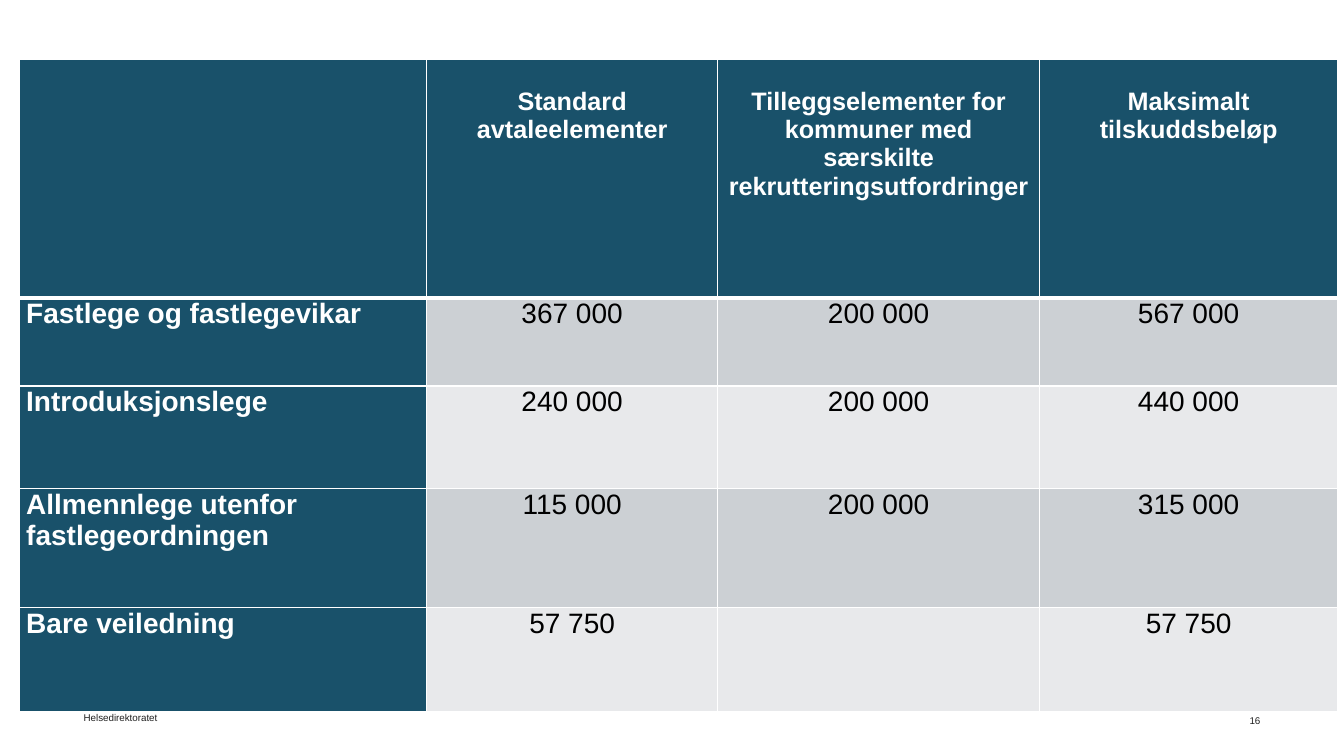
from lxml import etree
from pptx import Presentation
from pptx.dml.color import RGBColor
from pptx.enum.text import MSO_ANCHOR, PP_ALIGN
from pptx.oxml import ns
from pptx.util import Inches, Pt

COLORS = {
    "header": "19516A",
    "odd_row": "CCD0D4",
    "even_row": "E8E9EB",
    "white": "FFFFFF",
    "amount": "000000",
    "footer": "202020",
}
FONT = "Arial"
COLUMN_WIDTHS = [4.04, 2.89, 3.19, 2.96]
ROW_HEIGHTS = [2.37, 0.87, 1.02, 1.18, 1.03]
GRANTS = [
    ["", "Standard avtaleelementer",
     "Tilleggselementer for kommuner med\nsærskilte rekrutteringsutfordringer",
     "Maksimalt tilskuddsbeløp"],
    ["Fastlege og fastlegevikar", "367 000", "200 000", "567 000"],
    ["Introduksjonslege", "240 000", "200 000", "440 000"],
    ["Allmennlege utenfor fastlegeordningen", "115 000", "200 000", "315 000"],
    ["Bare veiledning", "57 750", "", "57 750"],
]


def rgb(name):
    return RGBColor.from_string(COLORS[name])


def write(frame, content, size, color, align, bold=False):
    frame.text = content
    for paragraph in frame.paragraphs:
        paragraph.alignment = align
        paragraph.font.size = Pt(size)
        for run in paragraph.runs:
            run.font.name = FONT
            run.font.size = Pt(size)
            run.font.bold = bold
            run.font.color.rgb = rgb(color)


def add_borders(cell, top, bottom):
    properties = cell._tc.get_or_add_tcPr()
    for side, points in (("L", 1), ("R", 1), ("T", top), ("B", bottom)):
        line = etree.SubElement(properties, ns.qn(f"a:ln{side}"), w=str(Pt(points)))
        fill = etree.SubElement(line, ns.qn("a:solidFill"))
        etree.SubElement(fill, ns.qn("a:srgbClr"), val=COLORS["white"])


def format_cell(cell, content, row, column):
    is_header = row == 0
    is_label = is_header or column == 0
    add_borders(cell, 3 if row == 1 else 1, 3 if is_header else 1)
    cell.fill.solid()
    cell.fill.fore_color.rgb = rgb(
        "header" if is_label else "odd_row" if row % 2 else "even_row")
    cell.margin_left = cell.margin_right = Inches(0.07)
    cell.margin_top = Inches(0.28 if is_header else 0)
    cell.margin_bottom = 0
    write(cell.text_frame, content, 18 if is_header else 20,
          "white" if is_label else "amount",
          PP_ALIGN.CENTER if is_header or column else PP_ALIGN.LEFT, is_label)


def add_grant_table(slide, left, top, width, height):
    table = slide.shapes.add_table(
        len(GRANTS), len(COLUMN_WIDTHS),
        Inches(left), Inches(top), Inches(width), Inches(height)).table
    for column, column_width in zip(table.columns, COLUMN_WIDTHS):
        column.width = Inches(column_width)
    for row, row_height in zip(table.rows, ROW_HEIGHTS):
        row.height = Inches(row_height)
    for row, contents in enumerate(GRANTS):
        for column, content in enumerate(contents):
            format_cell(table.cell(row, column), content, row, column)


def add_footer_text(slide, content, left, top, width, height, align):
    frame = slide.shapes.add_textbox(
        Inches(left), Inches(top), Inches(width), Inches(height)).text_frame
    frame.word_wrap = True
    frame.vertical_anchor = MSO_ANCHOR.MIDDLE
    frame.margin_left = frame.margin_right = 0
    frame.margin_top = frame.margin_bottom = 0
    write(frame, content, 7, "footer", align)
    frame.paragraphs[0].space_after = Pt(6)


def main():
    deck = Presentation()
    deck.slide_width, deck.slide_height = Inches(13.33), Inches(7.5)
    slide = deck.slides.add_slide(deck.slide_layouts[6])
    add_footer_text(slide, "Helsedirektoratet", 0.83, 7.06, 0.98, 0.12, PP_ALIGN.LEFT)
    add_footer_text(slide, "16", 11.52, 7.09, 0.98, 0.12, PP_ALIGN.RIGHT)
    add_grant_table(slide, 0.19, 0.59, sum(COLUMN_WIDTHS), sum(ROW_HEIGHTS))
    deck.save("out.pptx")


if __name__ == "__main__":
    main()
